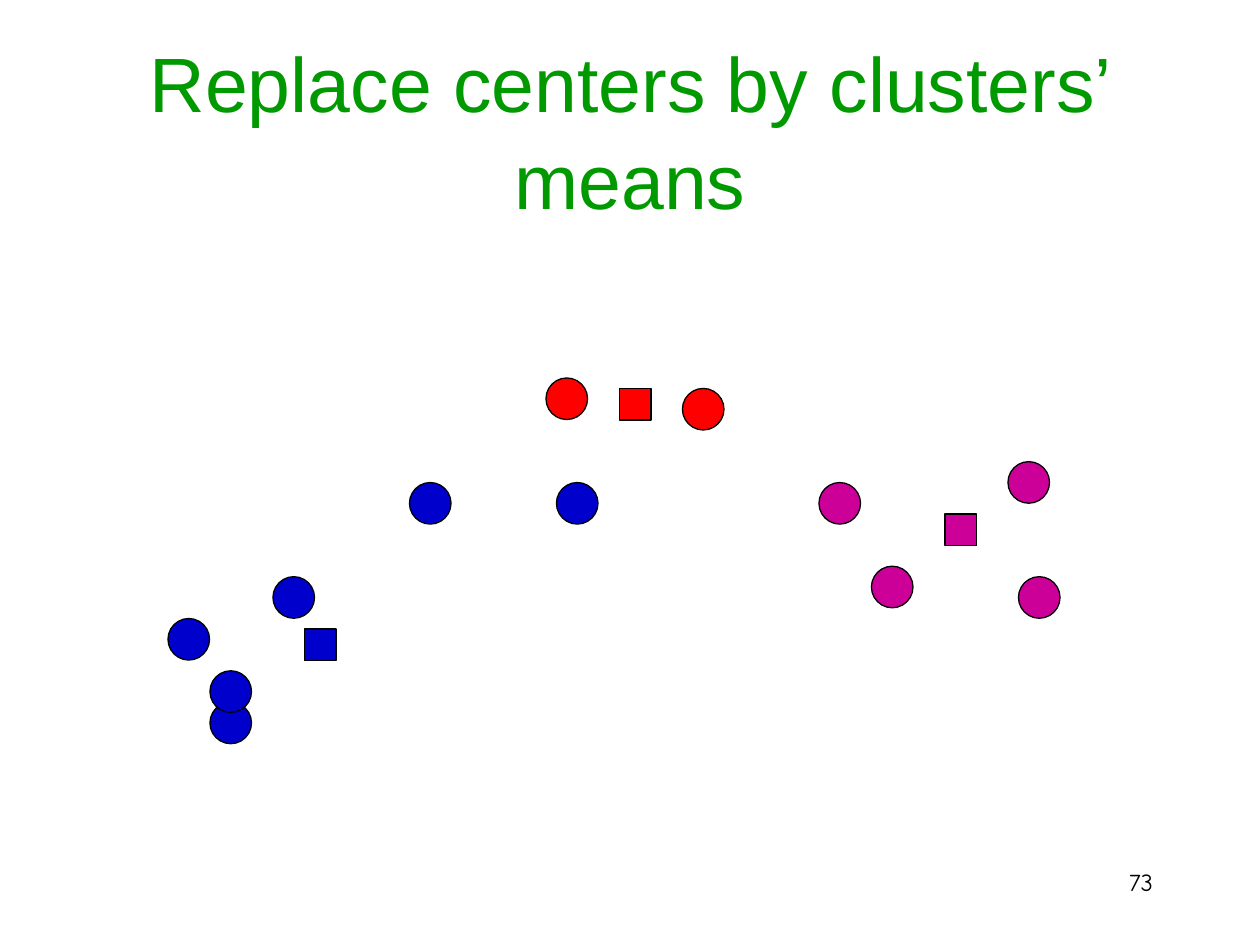
from pptx import Presentation
from pptx import util as u
from pptx.dml.color import RGBColor
from pptx.enum import shapes, text

COLORS = {"title": "009900", "ink": "000000", "paper": "FFFFFF",
          "blue": "0000CC", "red": "FF0000", "magenta": "CC0099"}
TITLE = "Replace centers by clusters’ means"
PAGE_NUMBER = "73"

# Top left corners as (column, row) on the plot grid
CLUSTERS = {
    "blue": {"points": [(20, 31), (16, 23), (26, 19), (53, 10), (39, 10), (20, 28)],
             "mean": (29, 24)},
    "red": {"points": [(52, 0), (65, 1)], "mean": (59, 1)},
    "magenta": {"points": [(96, 8), (97, 19), (78, 10), (83, 18)], "mean": (90, 13)},
}
COLUMN = 1 / 12
ROW = 0.083
PLOT_TOP = 3
POINT_SIZE = 0.33
MEAN_SIZE = 0.25


def color(name):
    return RGBColor.from_string(COLORS[name])


def place(shape, left, top, width, height):
    shape.left, shape.top = u.Inches(left), u.Inches(top)
    shape.width, shape.height = u.Inches(width), u.Inches(height)


def write(shape, words, font, size, color_name, alignment):
    shape.text_frame.word_wrap = True
    paragraph = shape.text_frame.paragraphs[0]
    paragraph.alignment = alignment
    run = paragraph.add_run()
    run.text = words
    run.font.name, run.font.size = font, u.Pt(size)
    run.font.color.rgb = color(color_name)
    return paragraph


def add_marker(slide, kind, cell, size, color_name):
    column, row = cell
    marker = slide.shapes.add_shape(
        kind, u.Inches(column * COLUMN), u.Inches(PLOT_TOP + row * ROW),
        u.Inches(size), u.Inches(size))
    marker.shadow.inherit = False
    marker.fill.solid()
    marker.fill.fore_color.rgb = color(color_name)
    marker.line.color.rgb = color("ink")
    marker.line.width = u.Pt(0.75)


def main():
    presentation = Presentation()
    presentation.slide_width, presentation.slide_height = u.Inches(10), u.Inches(7.5)
    slide = presentation.slides.add_slide(presentation.slide_layouts[5])
    slide.background.fill.solid()
    slide.background.fill.fore_color.rgb = color("paper")

    title = slide.shapes.title
    place(title, 0.75, 0.39, 8.5, 1.25)
    paragraph = write(title, TITLE, "Arial", 44, "title", text.PP_ALIGN.CENTER)
    paragraph.line_spacing = 1.05
    title.text_frame.vertical_anchor = text.MSO_ANCHOR.MIDDLE
    title.text_frame.auto_size = text.MSO_AUTO_SIZE.NONE

    number = slide.shapes.add_textbox(0, 0, 0, 0)
    place(number, 7.17, 6.83, 2.08, 0.5)
    write(number, PAGE_NUMBER, "Comic Neue", 14, "ink", text.PP_ALIGN.RIGHT)

    for color_name, cluster in CLUSTERS.items():
        for cell in cluster["points"]:
            add_marker(slide, shapes.MSO_SHAPE.OVAL, cell, POINT_SIZE, color_name)
        add_marker(slide, shapes.MSO_SHAPE.RECTANGLE, cluster["mean"], MEAN_SIZE, color_name)

    presentation.save("out.pptx")


if __name__ == "__main__":
    main()
